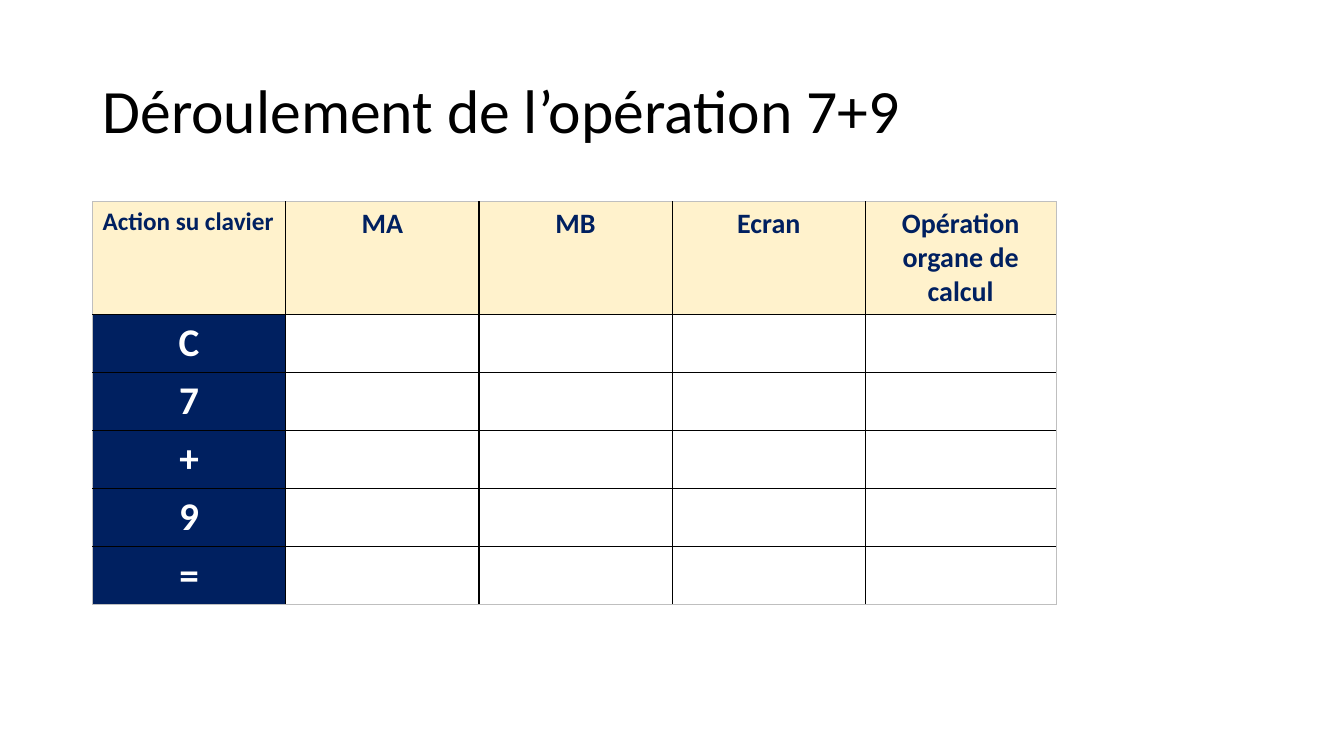
from dataclasses import dataclass

from lxml.etree import SubElement
from pptx import Presentation
from pptx.dml.color import RGBColor
from pptx.enum.text import MSO_ANCHOR, MSO_AUTO_SIZE, PP_ALIGN
from pptx.oxml.ns import qn
from pptx.slide import Slide
from pptx.table import Table, _Cell
from pptx.text.text import _Paragraph
from pptx.util import Cm, Pt

FONT = "Calibri"
NAVY = "002060"
CREAM = "FFF2CC"
WHITE = "FFFFFF"
BLACK = "000000"
GREY = "BFBFBF"
LEFT = Cm(2.33)


@dataclass(frozen=True)
class Label:
    """Text and look of one filled cell."""

    text: str
    size: int
    color: str
    fill: str
    align: PP_ALIGN = PP_ALIGN.CENTER


HEADERS = [Label("Action su clavier", 18, NAVY, CREAM, PP_ALIGN.LEFT)] + [
    Label(text, 20, NAVY, CREAM)
    for text in ("MA", "MB", "Ecran", "Opération organe de calcul")
]
KEYS = [Label(text, 28, WHITE, NAVY) for text in ("C", "7", "+", "9", "=")]


def rgb(color: str) -> RGBColor:
    """Turn a hex string into a colour."""
    return RGBColor.from_string(color)


def style_paragraph(para: _Paragraph, size: int, color: str, bold: bool, align: PP_ALIGN) -> None:
    """Set the font and alignment of a paragraph."""
    para.alignment = align
    para.font.name = FONT
    para.font.size = Pt(size)
    para.font.bold = bold
    para.font.color.rgb = rgb(color)


def draw_border(cell: _Cell, side: str, color: str, width: float) -> None:
    """Draw one side of a cell."""
    line = SubElement(cell._tc.get_or_add_tcPr(), qn(f"a:ln{side}"), w=str(Pt(width)))
    fill = SubElement(line, qn("a:solidFill"))
    SubElement(fill, qn("a:srgbClr"), val=color)


def draw_borders(table: Table) -> None:
    """Rule the table in black inside and thin grey around."""
    last_row, last_column = len(table.rows) - 1, len(table.columns) - 1
    for row in range(last_row + 1):
        for column in range(last_column + 1):
            edges = {
                "L": column == 0,
                "R": column == last_column,
                "T": row == 0,
                "B": row == last_row,
            }
            for side, outer in edges.items():
                color, width = (GREY, 0.5) if outer else (BLACK, 1)
                draw_border(table.cell(row, column), side, color, width)


def fill_cell(cell: _Cell, label: Label) -> None:
    """Write a label in a cell and colour the cell."""
    cell.text = label.text
    cell.fill.solid()
    cell.fill.fore_color.rgb = rgb(label.fill)
    style_paragraph(cell.text_frame.paragraphs[0], label.size, label.color, True, label.align)


def add_title(page: Slide, text: str) -> None:
    """Place and format the title placeholder."""
    title = page.shapes.title
    title.left, title.top, title.width, title.height = LEFT, Cm(1.01), Cm(29.21), Cm(3.68)
    frame = title.text_frame
    frame.text = text
    frame.auto_size = MSO_AUTO_SIZE.NONE
    frame.vertical_anchor = MSO_ANCHOR.MIDDLE
    para = frame.paragraphs[0]
    para.line_spacing = 0.9
    style_paragraph(para, 44, BLACK, False, PP_ALIGN.LEFT)


def add_steps_table(page: Slide) -> None:
    """Add the table of key presses and register contents."""
    box = page.shapes.add_table(
        len(KEYS) + 1, len(HEADERS), LEFT, Cm(5.08), Cm(24.28), Cm(10.14)
    )
    table = box.table
    table.first_row = table.horz_banding = False
    for column in table.columns:
        column.width = Cm(4.87)
    table.columns[len(HEADERS) - 1].width = Cm(4.8)
    for row in table.rows:
        row.height = Cm(1.46)
    table.rows[0].height = Cm(2.84)

    draw_borders(table)
    for cell in table.iter_cells():
        cell.fill.background()
    for column, header in enumerate(HEADERS):
        fill_cell(table.cell(0, column), header)
    for row, key in enumerate(KEYS, start=1):
        fill_cell(table.cell(row, 0), key)


def main() -> None:
    """Build the deck and save it."""
    deck = Presentation()
    deck.slide_width, deck.slide_height = Cm(33.87), Cm(19.05)
    page = deck.slides.add_slide(deck.slide_layouts.get_by_name("Title Only"))
    add_title(page, "Déroulement de l’opération 7+9")
    add_steps_table(page)
    deck.save("out.pptx")


if __name__ == "__main__":
    main()
